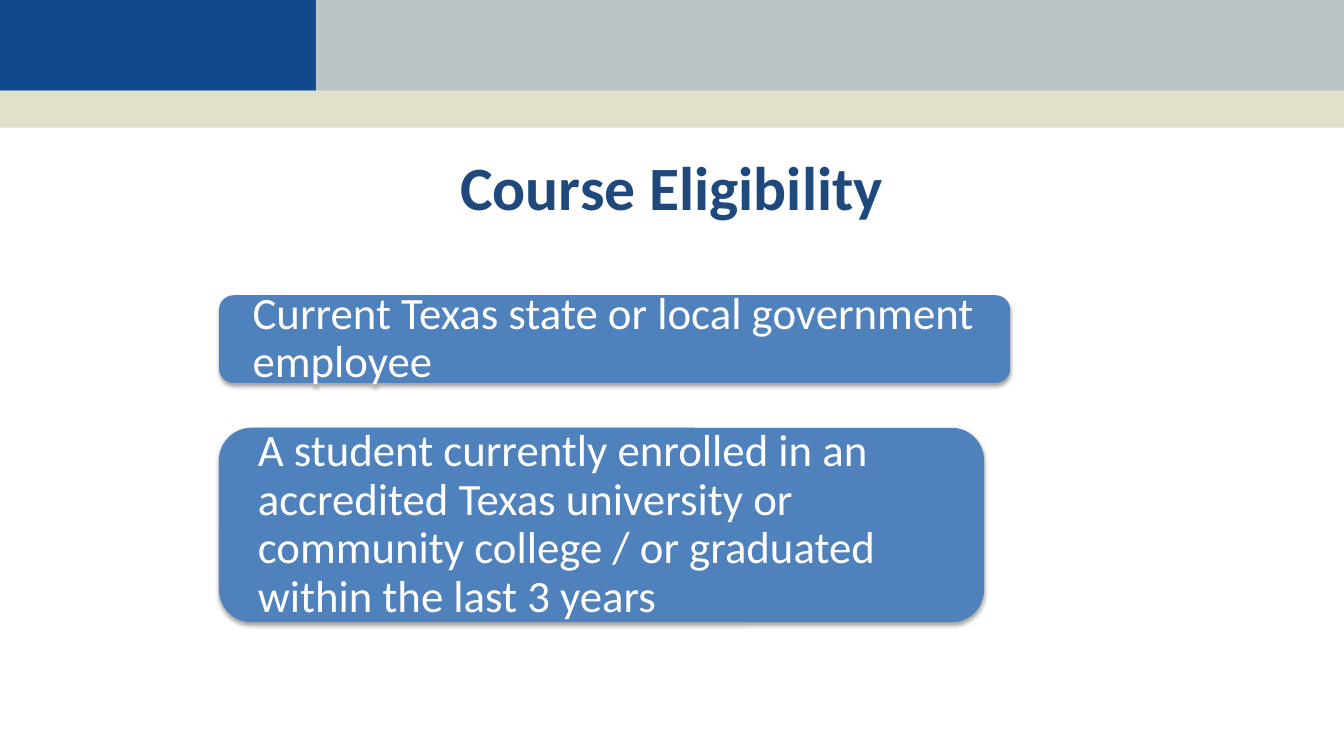
from lxml import etree
from pptx import Presentation
from pptx.dml.color import RGBColor
from pptx.enum.shapes import MSO_SHAPE
from pptx.enum.text import MSO_ANCHOR, PP_ALIGN
from pptx.oxml.ns import qn
from pptx.util import Cm, Pt

RECTANGLE, ROUNDED = MSO_SHAPE.RECTANGLE, MSO_SHAPE.ROUNDED_RECTANGLE
LEFT, CENTER = PP_ALIGN.LEFT, PP_ALIGN.CENTER
MIDDLE = MSO_ANCHOR.MIDDLE
SLIDE_WIDTH, SLIDE_HEIGHT = 33.87, 19.05
FONT = "Calibri"


def color(hex_value):
    return RGBColor.from_string(hex_value)


def add_block(slide, box, fill, kind=RECTANGLE, alpha=100):
    block = slide.shapes.add_shape(kind, *map(Cm, box))
    block.shadow.inherit = False
    block.line.fill.background()
    block.fill.solid()
    block.fill.fore_color.rgb = color(fill)
    if alpha < 100:
        fill_color = block.fill._xPr.find(qn("a:solidFill"))[0]
        etree.SubElement(fill_color, qn("a:alpha"), val=str(alpha * 1000))
    return block


def add_soft_shadow(block):
    effects = block._element.spPr.find(qn("a:effectLst"))
    shadow = etree.SubElement(effects, qn("a:outerShdw"), blurRad=str(Pt(3.1)),
                              dist=str(Pt(1.8)), dir="5400000", rotWithShape="0")
    black = etree.SubElement(shadow, qn("a:srgbClr"), val="000000")
    etree.SubElement(black, qn("a:alpha"), val="35000")


def write_text(shape, text, size, ink, bold=False, align=LEFT, spacing=1.0,
               side=0.25, edge=0.13):
    frame = shape.text_frame
    frame.word_wrap = True
    frame.vertical_anchor = MIDDLE
    frame.margin_left = frame.margin_right = Cm(side)
    frame.margin_top = frame.margin_bottom = Cm(edge)
    paragraph = frame.paragraphs[0]
    paragraph.text = text
    paragraph.alignment = align
    paragraph.line_spacing = spacing
    font = paragraph.font
    font.name, font.size, font.bold = FONT, Pt(size), bold
    font.color.rgb = color(ink)


def add_header(slide, left, top, width, height):
    band_height = 0.71 * height
    accent_width = 0.235 * width
    stripe_top = top + band_height
    add_block(slide, (left, top, accent_width, band_height), "104A8C")
    add_block(slide, (left + accent_width, top, width - accent_width, band_height),
              "919FA3", alpha=61)
    add_block(slide, (left, stripe_top, width, height - band_height),
              "CECCA8", alpha=60)


def add_title(slide, left, top, width, height, text):
    title = slide.shapes.add_textbox(Cm(left), Cm(top), Cm(width), Cm(height))
    write_text(title, text, 44, "1F497D", bold=True, align=CENTER)


def add_requirement(slide, left, top, width, height, text):
    card = add_block(slide, (left, top, width, height), "4F81BD", kind=ROUNDED)
    add_soft_shadow(card)
    write_text(card, text, 32, "FFFFFF", spacing=0.9, side=0.74, edge=0)


def main():
    deck = Presentation()
    deck.slide_width, deck.slide_height = Cm(SLIDE_WIDTH), Cm(SLIDE_HEIGHT)
    slide = deck.slides.add_slide(deck.slide_layouts[6])

    # Header bands and title
    add_header(slide, 0, 0, SLIDE_WIDTH, 3.22)
    add_title(slide, 1.69, 3.3, SLIDE_WIDTH - 2 * 1.69, 2.79, "Course Eligibility")

    # Eligibility requirements, stacked with a fixed gap
    requirements = [
        (19.94, 2.21, "Current Texas state or local government employee"),
        (19.28, 4.9, "A student currently enrolled in an accredited Texas university "
                     "or community college / or graduated within the last 3 years"),
    ]
    top, gap = 7.44, 1.13
    for width, height, text in requirements:
        add_requirement(slide, 5.52, top, width, height, text)
        top += height + gap

    deck.save("out.pptx")


if __name__ == "__main__":
    main()
